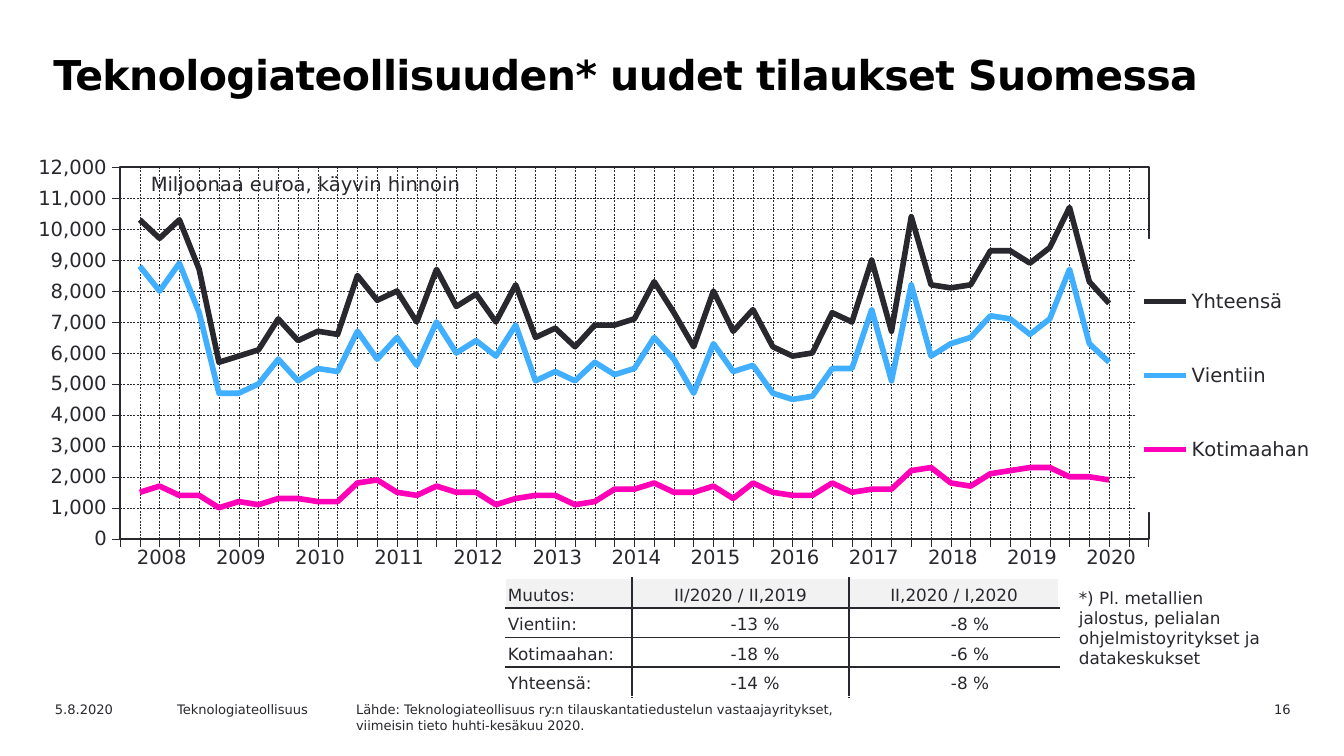
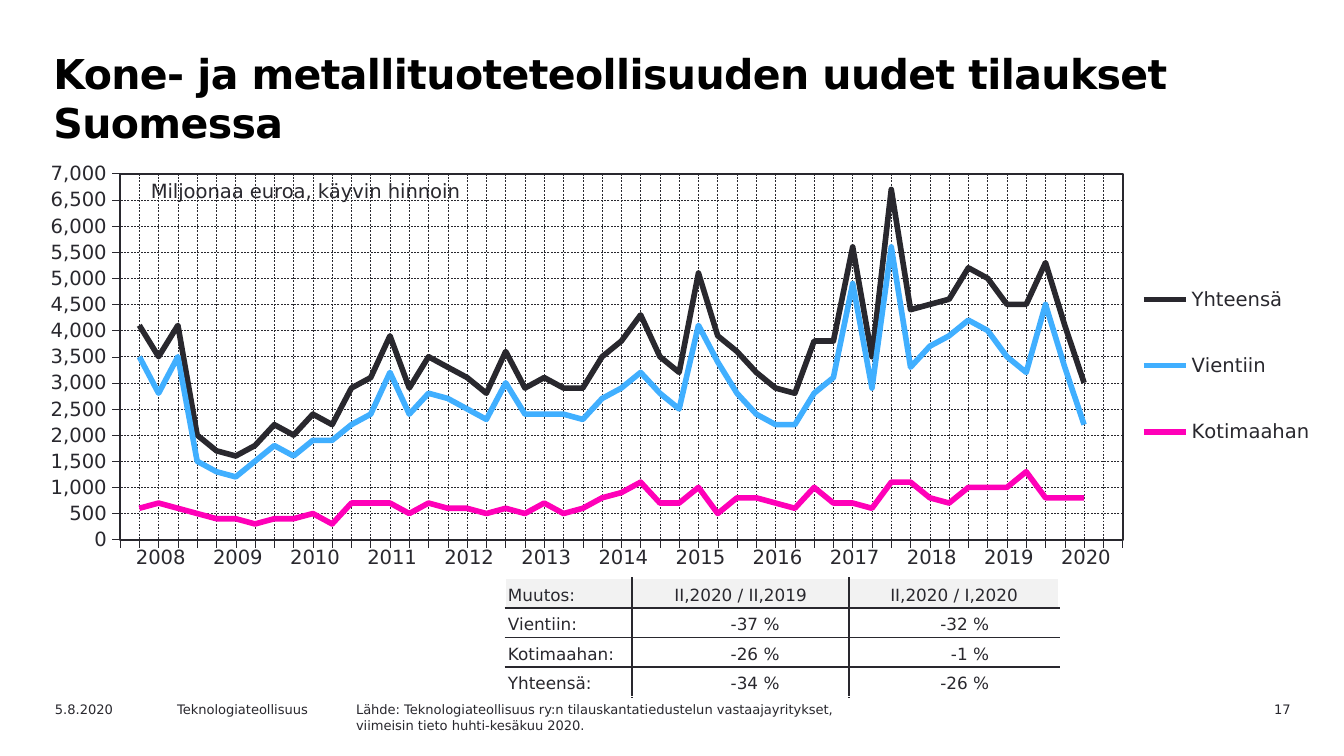
from lxml import etree
from pptx import Presentation
from pptx.chart.data import CategoryChartData
from pptx.dml.color import RGBColor
from pptx.enum.chart import XL_CHART_TYPE, XL_LEGEND_POSITION, XL_MARKER_STYLE, XL_TICK_LABEL_POSITION, XL_TICK_MARK
from pptx.enum.dml import MSO_LINE
from pptx.enum.text import MSO_ANCHOR, PP_ALIGN
from pptx.oxml import parse_xml
from pptx.oxml.ns import nsdecls, qn
from pptx.util import Cm, Pt

LEFT, CENTER, RIGHT = PP_ALIGN.LEFT, PP_ALIGN.CENTER, PP_ALIGN.RIGHT
BOTTOM = MSO_ANCHOR.BOTTOM
LINE_CHART = XL_CHART_TYPE.LINE
LEGEND_RIGHT = XL_LEGEND_POSITION.RIGHT
NO_MARKER = XL_MARKER_STYLE.NONE
NO_LABELS = XL_TICK_LABEL_POSITION.NONE
TICK_OUT, NO_TICK = XL_TICK_MARK.OUTSIDE, XL_TICK_MARK.NONE
DASH = MSO_LINE.DASH

INK = RGBColor(0x29, 0x28, 0x2E)
BLACK = RGBColor(0x00, 0x00, 0x00)
WHITE = RGBColor(0xFF, 0xFF, 0xFF)
HEADER_GREY = RGBColor(0xF2, 0xF2, 0xF2)
SKY = RGBColor(0x40, 0xAF, 0xFF)
PINK = RGBColor(0xFF, 0x00, 0xB8)
FONT = "DejaVu Sans"
NO_TABLE_STYLE = "{2D5ABB26-0587-4C30-8999-92F81FD0307C}"

YEARS = range(2008, 2021)
QUARTERS = 4 * len(YEARS) + 1
CHART_WIDTH, CHART_BOTTOM = 24.61, 11.28
FOOTERS = [
    (0.79, 2.54, LEFT, ["5.8.2020"]),
    (3.1, 3.61, LEFT, ["Teknologiateollisuus"]),
    (6.48, 12.88, LEFT, [
        "Lähde: Teknologiateollisuus ry:n tilauskantatiedustelun vastaajayritykset,",
        "viimeisin tieto huhti-kesäkuu 2020."]),
]

# Orders are in hundreds of millions of euros, one value per quarter.
SLIDES = [
    dict(
        number="16", title="Teknologiateollisuuden* uudet tilaukset Suomessa",
        title_width=23.39, title_spacing=Pt(27),
        chart_top=2.82, plot_width=0.79, top_value=12000, step=1000, legend_height=0.61,
        exports=[88, 80, 89, 73, 47, 47, 50, 58, 51, 55, 54, 67, 58, 65, 56, 70, 60,
                 64, 59, 69, 51, 54, 51, 57, 53, 55, 65, 58, 47, 63, 54, 56, 47, 45,
                 46, 55, 55, 74, 51, 82, 59, 63, 65, 72, 71, 66, 71, 87, 63, 57],
        domestic=[15, 17, 14, 14, 10, 12, 11, 13, 13, 12, 12, 18, 19, 15, 14, 17, 15,
                  15, 11, 13, 14, 14, 11, 12, 16, 16, 18, 15, 15, 17, 13, 18, 15, 14,
                  14, 18, 15, 16, 16, 22, 23, 18, 17, 21, 22, 23, 23, 20, 20, 19],
        changes=[("Muutos:", "II/2020 / II,2019", "II,2020 / I,2020"),
                 ("Vientiin:", "-13 %", "-8 %"),
                 ("Kotimaahan:", "-18 %", "-6 %"),
                 ("Yhteensä:", "-14 %", "-8 %")],
        note="*) Pl. metallien jalostus, pelialan ohjelmistoyritykset ja datakeskukset",
    ),
    dict(
        number="17", title="Kone- ja metallituoteteollisuuden uudet tilaukset Suomessa",
        title_width=22.2, title_spacing=None,
        chart_top=2.95, plot_width=0.77, top_value=7000, step=500, legend_height=0.55,
        exports=[35, 28, 35, 15, 13, 12, 15, 18, 16, 19, 19, 22, 24, 32, 24, 28, 27,
                 25, 23, 30, 24, 24, 24, 23, 27, 29, 32, 28, 25, 41, 34, 28, 24, 22,
                 22, 28, 31, 49, 29, 56, 33, 37, 39, 42, 40, 35, 32, 45, 33, 22],
        domestic=[6, 7, 6, 5, 4, 4, 3, 4, 4, 5, 3, 7, 7, 7, 5, 7, 6,
                  6, 5, 6, 5, 7, 5, 6, 8, 9, 11, 7, 7, 10, 5, 8, 8, 7,
                  6, 10, 7, 7, 6, 11, 11, 8, 7, 10, 10, 10, 13, 8, 8, 8],
        changes=[("Muutos:", "II,2020 / II,2019", "II,2020 / I,2020"),
                 ("Vientiin:", "-37 %", "-32 %"),
                 ("Kotimaahan:", "-26 %", "-1 %"),
                 ("Yhteensä:", "-34 %", "-26 %")],
        note=None,
    ),
]


def write(frame, lines, size, align=LEFT, color=INK, bold=False):
    """Fill a text frame, one paragraph per line, and return its runs."""
    runs = []
    for index, line in enumerate(lines):
        paragraph = frame.add_paragraph() if index else frame.paragraphs[0]
        paragraph.alignment = align
        run = paragraph.add_run()
        run.text = line
        run.font.name, run.font.size, run.font.bold = FONT, Pt(size), bold
        run.font.color.rgb = color
        runs.append(run)
    return runs


def manual_layout(x, y, w, h, target=""):
    values = [("xMode", "edge"), ("yMode", "edge"), ("x", x), ("y", y), ("w", w), ("h", h)]
    if target:
        values.insert(0, ("layoutTarget", target))
    layout = etree.Element(qn("c:layout"))
    manual = etree.SubElement(layout, qn("c:manualLayout"))
    for tag, value in values:
        etree.SubElement(manual, qn(f"c:{tag}")).set("val", str(value))
    return layout


prs = Presentation()
prs.slide_width, prs.slide_height = Cm(25.4), Cm(14.28)

for page in SLIDES:
    slide = prs.slides.add_slide(prs.slide_layouts[6])

    # Title and footers
    title = slide.shapes.add_textbox(Cm(0.71), Cm(0.79), Cm(page["title_width"]), Cm(1.8)).text_frame
    title.word_wrap = True
    title.margin_left = Cm(0.3)
    title_run = write(title, [page["title"]], 22, color=BLACK, bold=True)[0]
    title_run.font._element.set("spc", "-30")
    if page["title_spacing"]:
        title.paragraphs[0].line_spacing = page["title_spacing"]

    for left, width, align, lines in FOOTERS + [(22.25, 2.39, RIGHT, [page["number"]])]:
        footer = slide.shapes.add_textbox(Cm(left), Cm(13.13), Cm(width), Cm(0.46)).text_frame
        footer.word_wrap = True
        write(footer, lines, 7, align)

    # Quarterly orders: the total is exports plus domestic orders
    exports, domestic = page["exports"], page["domestic"]
    total = [sum(pair) for pair in zip(exports, domestic)]
    order_lines = [("Yhteensä", total, INK), ("Vientiin", exports, SKY), ("Kotimaahan", domestic, PINK)]
    data = CategoryChartData(number_format="#,##0")
    data.categories = [str(quarter) for quarter in range(1, QUARTERS + 1)]
    for name, orders, _ in order_lines:
        data.add_series(name, [None] + [100 * value for value in orders] + [None, None])
    chart = slide.shapes.add_chart(LINE_CHART, Cm(0.3), Cm(page["chart_top"]), Cm(CHART_WIDTH),
                                   Cm(CHART_BOTTOM - page["chart_top"]), data).chart
    chart.has_title = False
    chart.font.name, chart.font.size, chart.font.bold = "Arial", Pt(19.5), True
    chart.font.color.rgb = INK
    chart.plots[0].vary_by_categories = False
    for series, (_, _, color) in zip(chart.plots[0].series, order_lines):
        series.smooth = False
        series.marker.style = NO_MARKER
        series.format.line.width = Pt(3)
        series.format.line.color.rgb = color

    quarter_axis, value_axis = chart.category_axis, chart.value_axis
    for axis in (quarter_axis, value_axis):
        axis.major_tick_mark, axis.minor_tick_mark = TICK_OUT, NO_TICK
        axis.format.line.color.rgb = INK
        axis.format.line.width = Pt(0.22)
        axis.has_major_gridlines = True
        grid = axis.major_gridlines.format.line
        grid.color.rgb, grid.width, grid.dash_style = INK, Pt(0.25), DASH
    quarter_axis.tick_label_position = NO_LABELS
    value_axis.minimum_scale, value_axis.maximum_scale = 0, page["top_value"]
    value_axis.major_unit = page["step"]
    value_axis.tick_labels.number_format = "#,##0"
    value_axis.tick_labels.number_format_is_linked = False
    cross_between = value_axis._element.find(qn("c:crossBetween"))
    if cross_between is None:
        cross_between = etree.Element(qn("c:crossBetween"))
        value_axis._element.find(qn("c:crosses")).addnext(cross_between)
    cross_between.set("val", "midCat")

    chart.has_legend = True
    legend = chart.legend
    legend.position, legend.include_in_layout = LEGEND_RIGHT, False
    for font in (value_axis.tick_labels.font, legend.font):
        font.name, font.size, font.bold = FONT, Pt(10.5), False
        font.color.rgb = INK

    plot_area = chart._chartSpace.chart.plotArea
    for part in (plot_area, legend._element):
        for layout in part.findall(qn("c:layout")):
            part.remove(layout)
    plot_area.insert(0, manual_layout(0.08, 0.04, page["plot_width"], 0.83, "inner"))
    plot_area.append(parse_xml(
        f'<c:spPr {nsdecls("c", "a")}><a:noFill/><a:ln w="12700"><a:solidFill>'
        f'<a:srgbClr val="{INK}"/></a:solidFill></a:ln></c:spPr>'))
    legend._element.find(qn("c:legendPos")).addnext(
        manual_layout(0.86, 0.2, 0.14, page["legend_height"]))
    legend._element.find(qn("c:overlay")).addnext(parse_xml(
        f'<c:spPr {nsdecls("c", "a")}><a:solidFill><a:srgbClr val="{WHITE}"/></a:solidFill>'
        '<a:ln><a:noFill/></a:ln></c:spPr>'))

    unit = slide.shapes.add_textbox(Cm(2.62), Cm(page["chart_top"] + 0.3), Cm(6.6), Cm(0.69)).text_frame
    unit.word_wrap = False
    unit.margin_left = unit.margin_right = Cm(0.23)
    write(unit, ["Miljoonaa euroa, käyvin hinnoin"], 10.5)

    # Changes table: white outer edges, dark inner rules
    change_table = slide.shapes.add_table(4, 3, Cm(9.55), Cm(10.92), Cm(10.46), Cm(2.24)).table
    for column, width in zip(change_table.columns, (2.39, 4.11, 3.96)):
        column.width = Cm(width)
    for r, row in enumerate(page["changes"]):
        for c, text in enumerate(row):
            cell = change_table.cell(r, c)
            cell.vertical_anchor = BOTTOM
            cell.margin_left = cell.margin_right = cell.margin_top = cell.margin_bottom = Cm(0.05)
            align = LEFT if c == 0 else CENTER if r == 0 else RIGHT
            if align == RIGHT:
                cell.margin_right = Cm(1.32)
            write(cell.text_frame, [text], 9, align)
            outer = {"L": c == 0, "R": c == 2, "T": r == 0, "B": r == 3}
            for side, is_outer in outer.items():
                cell._tc.get_or_add_tcPr().append(parse_xml(
                    f'<a:ln{side} {nsdecls("a")} w="12700"><a:solidFill>'
                    f'<a:srgbClr val="{WHITE if is_outer else INK}"/></a:solidFill></a:ln{side}>'))
            if r in (0, 3):
                cell.fill.solid()
                cell.fill.fore_color.rgb = WHITE if r else HEADER_GREY
            else:
                cell.fill.background()

    if page["note"]:
        note = slide.shapes.add_textbox(Cm(20.14), Cm(10.97), Cm(4.22), Cm(1.8)).text_frame
        note.word_wrap = True
        write(note, [page["note"]], 9)

    # Year labels under the chart, as wide as the plot
    year_table = slide.shapes.add_table(1, len(YEARS), Cm(2.31), Cm(10.2),
                                        Cm(CHART_WIDTH * page["plot_width"]), Cm(0.79)).table
    for c, year in enumerate(YEARS):
        cell = year_table.cell(0, c)
        cell.margin_left = cell.margin_right = Cm(0.1)
        cell.fill.background()
        write(cell.text_frame, [str(year)], 10.5, CENTER)

    for table in (change_table, year_table):
        table.first_row = table.horz_banding = False
        table._tbl.tblPr.find(qn("a:tableStyleId")).text = NO_TABLE_STYLE

prs.save("out.pptx")
